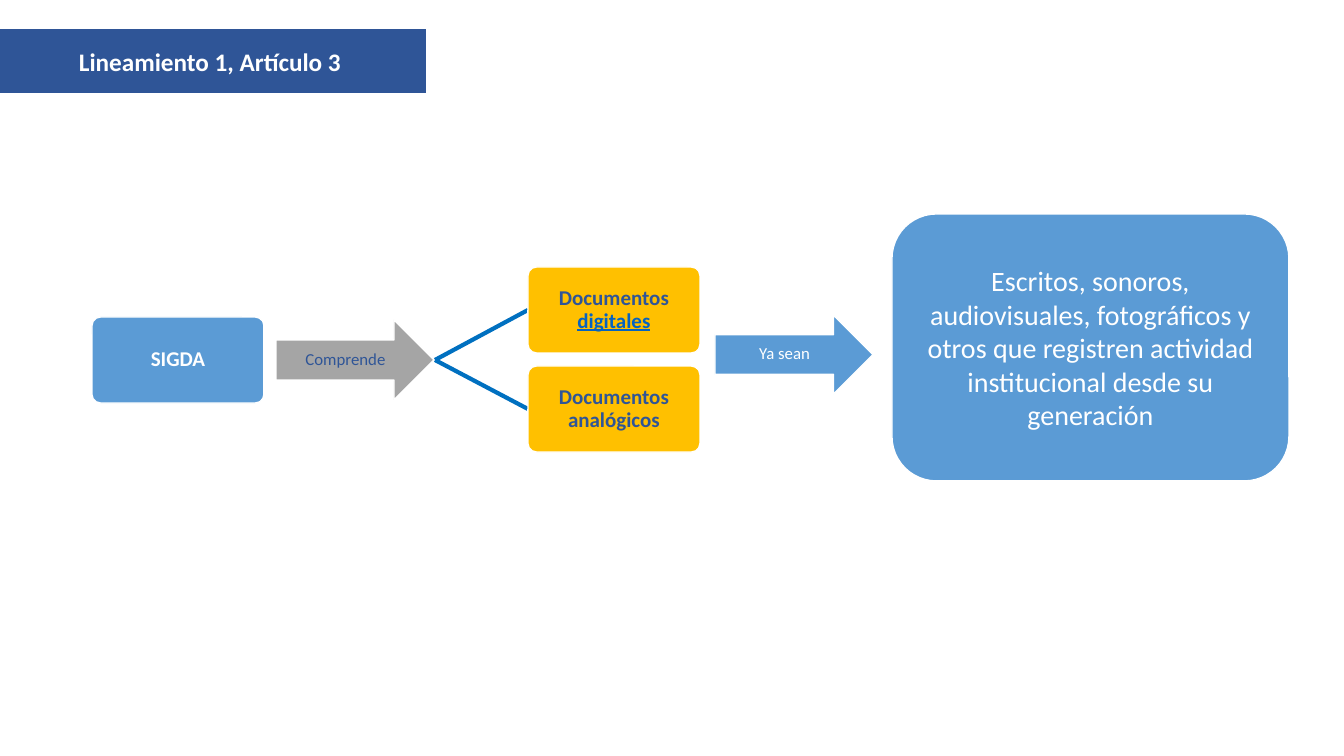
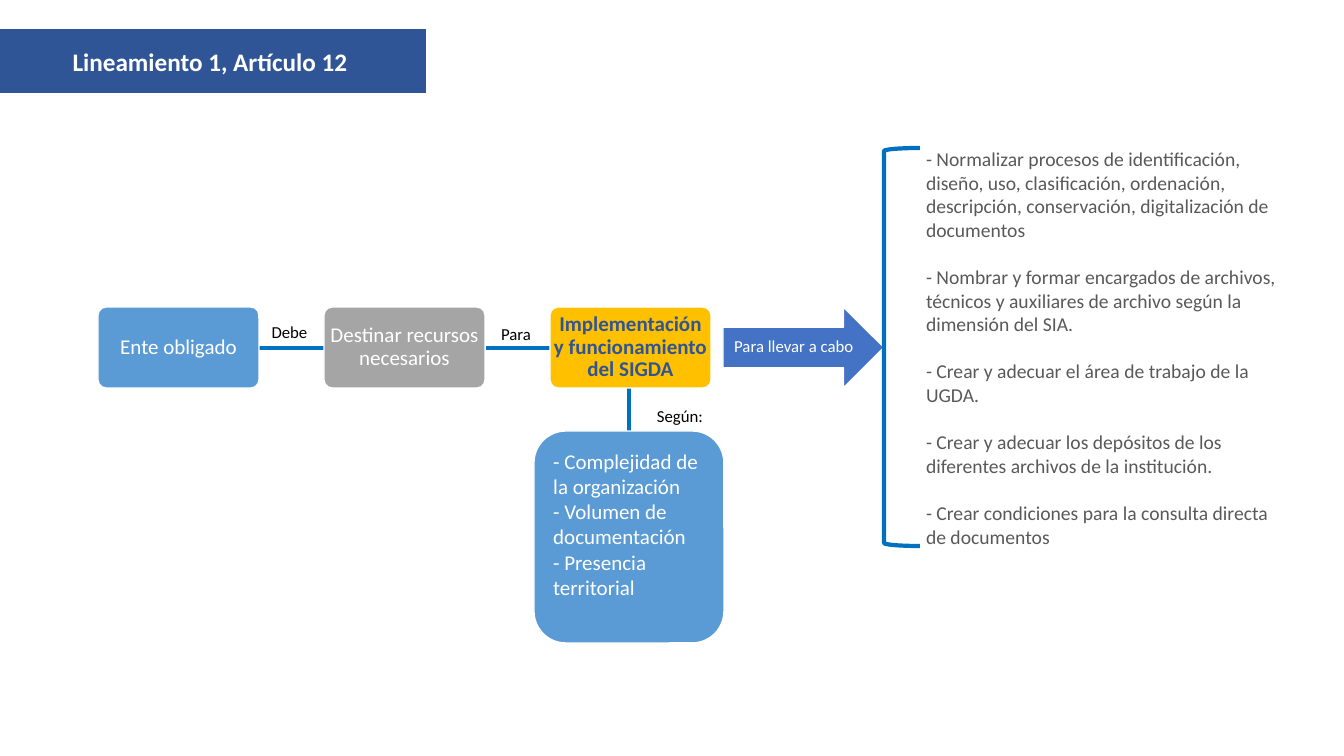
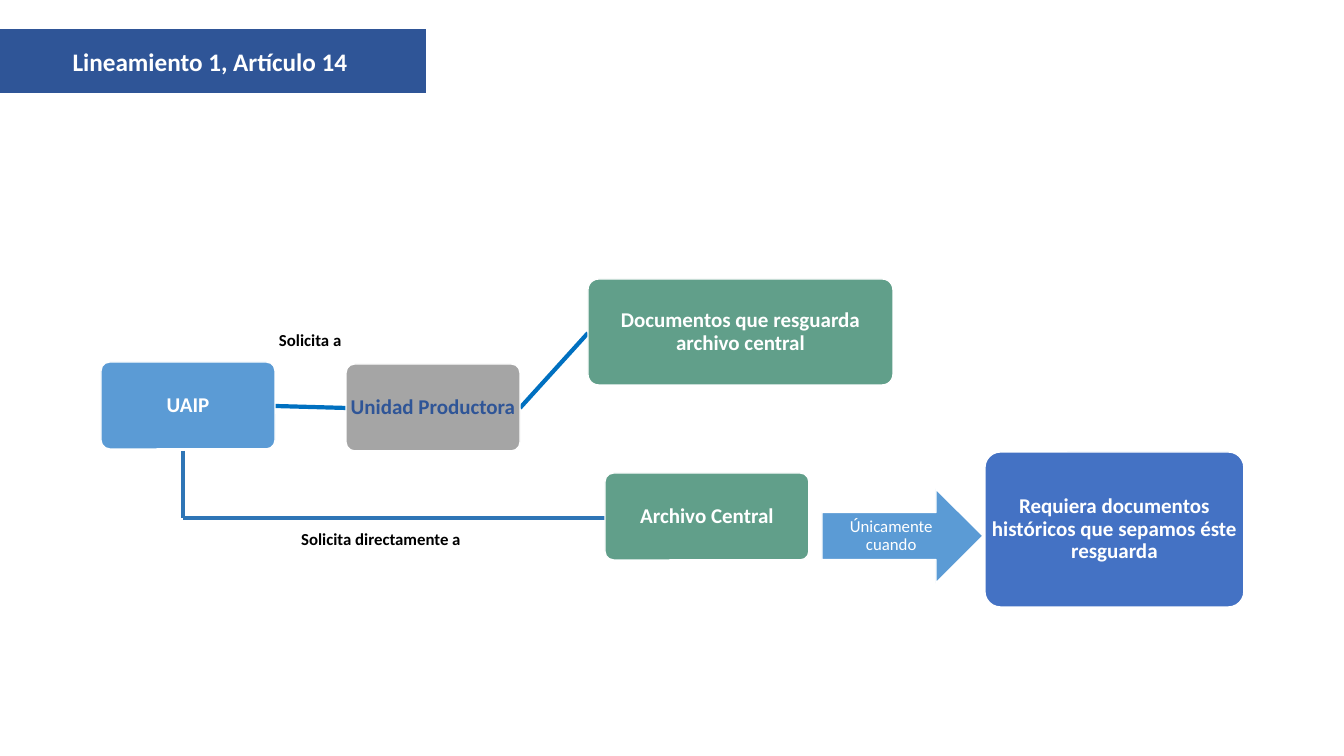
import pptx
import pptx.util
import pptx.dml.color
import pptx.enum.shapes
import pptx.enum.text
import pptx.oxml.ns
import lxml.etree

PX = 914400 / 100.8
FONT = "Calibri"
COLORS = {
    "white": "FFFFFF", "black": "000000", "text": "595959",
    "navy": "2F5597", "blue": "5B9BD5", "royal": "4472C4",
    "line": "0070C0", "elbow": "2E75B6", "link": "0563C1",
    "gray": "A5A5A5", "gold": "FFC000", "green": "619F8A",
}
SHAPES = pptx.enum.shapes.MSO_SHAPE
ALIGN = pptx.enum.text.PP_ALIGN
ANCHOR = pptx.enum.text.MSO_ANCHOR

# Formats of the recurring parts
NODE = dict(size=15, bold=True, spacing=0.9, margins=(1, 1, 1, 1))
PLAIN_NODE = dict(NODE, bold=False)
NAVY_NODE = dict(NODE, color="navy")
ARROW = dict(size=12, spacing=0.9, margins=(1, 0, 0, 0))
LABEL = dict(size=12, color="black", anchor=ANCHOR.TOP)

# Content: boxes are (kind, place in px, fill, text, format),
# lines are (from x, from y, to x, to y, colour, weight)
SLIDES = [
    {
        "title": "Lineamiento 1, Artículo 3",
        "lines": [(435, 360, 528, 310, "line", 3), (435, 360, 528, 409, "line", 3)],
        "boxes": [
            ("node", (92, 317, 172, 86), "blue", "SIGDA", NODE),
            ("arrow", (276, 320, 158, 80), "gray", "Comprende", dict(ARROW, color="navy")),
            ("node", (528, 267, 172, 86), "gold",
             [[("Documentos ", {}), ("digitales", dict(color="link", underline=True))]], NAVY_NODE),
            ("node", (528, 366, 172, 86), "gold", "Documentos analógicos", NAVY_NODE),
            ("arrow", (715, 315, 158, 79), "blue", "Ya sean", ARROW),
            ("panel", (892, 214, 397, 267), "blue",
             "Escritos, sonoros, audiovisuales, fotográficos y otros que registren "
             "actividad institucional desde su generación", dict(size=20)),
        ],
    },
    {
        "title": "Lineamiento 1, Artículo 12",
        "lines": [(259, 348, 324, 348, "line", 3), (486, 348, 550, 348, "line", 3),
                  (629, 387, 629, 432, "line", 3)],
        "boxes": [
            ("node", (98, 307, 161, 81), "blue", "Ente obligado", PLAIN_NODE),
            ("node", (324, 307, 161, 81), "gray", "Destinar recursos necesarios", PLAIN_NODE),
            ("node", (550, 307, 161, 81), "gold",
             "Implementación y funcionamiento del SIGDA", NAVY_NODE),
            ("arrow", (723, 307, 161, 81), "royal", "Para llevar a cabo", ARROW),
            ("panel", (534, 431, 190, 212), "blue",
             ["- Complejidad de la organización", "- Volumen de documentación",
              "- Presencia territorial"],
             dict(size=15, align=ALIGN.LEFT, margins=(10, 5, 10, 31))),
            ("bracket", (884, 148, 36, 398), None, None, {}),
            ("label", (916, 142, 381, 414), None,
             ["- Normalizar procesos de identificación, diseño, uso, clasificación, "
              "ordenación, descripción, conservación, digitalización de documentos",
              "- Nombrar y formar encargados de archivos, técnicos y auxiliares de "
              "archivo según la dimensión del SIA.",
              "- Crear y adecuar el área de trabajo de la UGDA.",
              "- Crear y adecuar los depósitos de los diferentes archivos de la institución.",
              "- Crear condiciones para la consulta directa de documentos"],
             dict(LABEL, size=14, color="text", align=ALIGN.LEFT, after=17)),
            ("label", (256, 317, 67, 30), None, "Debe", LABEL),
            ("label", (484, 319, 64, 30), None, "Para", LABEL),
            ("label", (647, 401, 162, 30), None, "Según:", dict(LABEL, align=ALIGN.LEFT)),
        ],
    },
    {
        "title": "Lineamiento 1, Artículo 14",
        "lines": [(275, 406, 346, 408, "line", 3), (520, 408, 588, 333, "line", 3),
                  (183, 451, 183, 518, "elbow", 2.25), (183, 518, 605, 518, "elbow", 2.25)],
        "boxes": [
            ("node", (101, 362, 174, 87), "blue", "UAIP", NODE),
            ("node", (346, 364, 174, 87), "gray", "Unidad Productora", NAVY_NODE),
            ("node", (588, 279, 305, 106), "green",
             "Documentos que resguarda archivo central", NODE),
            ("node", (605, 473, 204, 87), "green", "Archivo Central", NODE),
            ("arrow", (822, 489, 161, 94), "blue", "Únicamente cuando", ARROW),
            ("node", (985, 452, 259, 155), "royal",
             "Requiera documentos históricos que sepamos éste resguarda", NODE),
            ("label", (269, 325, 108, 30), None, "Solicita a",
             dict(LABEL, bold=True, align=ALIGN.LEFT)),
            ("label", (182, 524, 398, 30), None, "Solicita directamente a",
             dict(LABEL, bold=True)),
        ],
    },
]

# Kind of box: preset shape, corner adjustment, outline colour and weight
KINDS = {
    "node": (SHAPES.ROUNDED_RECTANGLE, 0.1, "white", 1),
    "arrow": (SHAPES.RIGHT_ARROW, None, "white", 1),
    "panel": (SHAPES.ROUNDED_RECTANGLE, None, "white", 1),
    "bracket": (SHAPES.LEFT_BRACKET, None, "line", 3),
}


def emu(*lengths):
    return [pptx.util.Emu(round(length * PX)) for length in lengths]


def rgb(name):
    return pptx.dml.color.RGBColor.from_string(COLORS[name])


def put_text(frame, text, size=15, color="white", bold=False, align=ALIGN.CENTER,
             anchor=ANCHOR.MIDDLE, spacing=1.0, after=0, margins=(10, 5, 10, 5)):
    """Fill a frame; text is a string or a list of paragraphs (string or spans)."""
    frame.word_wrap = True
    frame.auto_size = pptx.enum.text.MSO_AUTO_SIZE.NONE
    frame.vertical_anchor = anchor
    (frame.margin_left, frame.margin_top,
     frame.margin_right, frame.margin_bottom) = emu(*margins)
    for index, content in enumerate([text] if isinstance(text, str) else text):
        para = frame.add_paragraph() if index else frame.paragraphs[0]
        para.alignment = align
        para.line_spacing = spacing
        para.space_before = pptx.util.Pt(0)
        para.space_after = pptx.util.Pt(after)
        for words, extra in [(content, {})] if isinstance(content, str) else content:
            span = para.add_run()
            span.text = words
            span.font.name = FONT
            span.font.size = pptx.util.Pt(size)
            span.font.bold = bold
            span.font.underline = extra.get("underline")
            span.font.color.rgb = rgb(extra.get("color", color))


def add_title(page, text):
    """Turn the title placeholder into the pointed band at the top left."""
    title = page.shapes.title
    title.left, title.top, title.width, title.height = emu(0, 29, 426, 64)
    geometry = lxml.etree.SubElement(
        title._element.spPr, pptx.oxml.ns.qn("a:prstGeom"), prst="homePlate")
    lxml.etree.SubElement(geometry, pptx.oxml.ns.qn("a:avLst"))
    title.fill.solid()
    title.fill.fore_color.rgb = rgb("navy")
    put_text(title.text_frame, text, size=18, bold=True, margins=(10, 5, 16, 5))


def add_line(page, x1, y1, x2, y2, color, weight):
    line = page.shapes.add_connector(
        pptx.enum.shapes.MSO_CONNECTOR.STRAIGHT, *emu(x1, y1, x2, y2))
    line.line.color.rgb = rgb(color)
    line.line.width = pptx.util.Pt(weight)
    lxml.etree.SubElement(line._element.spPr, pptx.oxml.ns.qn("a:effectLst"))


def add_box(page, kind, place, fill, text, style):
    if kind == "label":
        box = page.shapes.add_textbox(*emu(*place))
    else:
        preset, corner, outline, weight = KINDS[kind]
        box = page.shapes.add_shape(preset, *emu(*place))
        box.shadow.inherit = False
        if corner is not None:
            box.adjustments[0] = corner
        if fill:
            box.fill.solid()
            box.fill.fore_color.rgb = rgb(fill)
        else:
            box.fill.background()
        box.line.color.rgb = rgb(outline)
        box.line.width = pptx.util.Pt(weight)
    if text:
        put_text(box.text_frame, text, **style)


def main():
    deck = pptx.Presentation()
    deck.slide_width, deck.slide_height = emu(1344, 756)
    for content in SLIDES:
        page = deck.slides.add_slide(deck.slide_layouts.get_by_name("Title Only"))
        add_title(page, content["title"])
        for line in content["lines"]:
            add_line(page, *line)
        for box in content["boxes"]:
            add_box(page, *box)
    deck.save("out.pptx")


if __name__ == "__main__":
    main()
